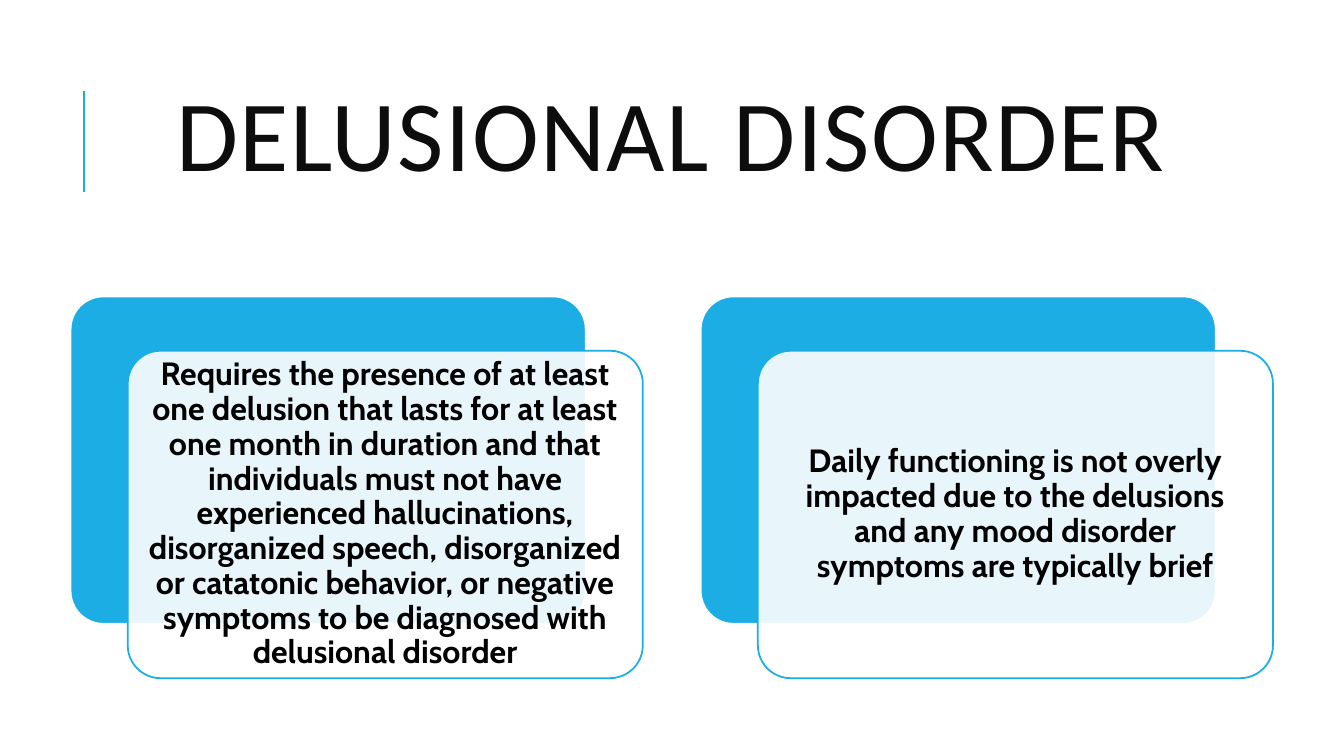
from dataclasses import dataclass

from lxml.etree import SubElement
from pptx import Presentation
from pptx.dml.color import RGBColor as Rgb
from pptx.enum.shapes import MSO_CONNECTOR as Connector, MSO_SHAPE as Shape
from pptx.enum.text import MSO_ANCHOR as Anchor, PP_ALIGN as Align
from pptx.oxml.ns import qn
from pptx.util import Cm, Pt


@dataclass(frozen=True)
class Theme:
    accent: Rgb = Rgb(0x1C, 0xAD, 0xE4)
    white: Rgb = Rgb(0xFF, 0xFF, 0xFF)
    title_ink: Rgb = Rgb(0x0D, 0x0D, 0x0D)
    body_ink: Rgb = Rgb(0, 0, 0)
    title_font: str = "Calibri"
    body_font: str = "Cabin"
    title_size: int = 72
    body_size: int = 23
    card_line: float = 1.25
    rule_line: float = 1.5


class SlideBuilder:
    def __init__(self, slide, theme):
        self.slide = slide
        self.theme = theme

    def add_text(self, frame, text, font, size, color, spacing, bold=False):
        """Fill a text frame with one centred paragraph."""
        frame.word_wrap = True
        frame.vertical_anchor = Anchor.MIDDLE
        para = frame.paragraphs[0]
        para.alignment = Align.CENTER
        para.line_spacing = spacing
        span = para.add_run()
        span.text = text
        span.font.name = font
        span.font.size = Pt(size)
        span.font.bold = bold
        span.font.color.rgb = color
        return span

    def title(self, text, left, top, width, height):
        theme = self.theme
        box = self.slide.shapes.add_textbox(Cm(left), Cm(top), Cm(width), Cm(height))
        span = self.add_text(box.text_frame, text, theme.title_font,
                             theme.title_size, theme.title_ink, 0.8)
        # Letter spacing in hundredths of a point
        span.font._element.set("spc", "100")

    def rule(self, x, top, bottom):
        line = self.slide.shapes.add_connector(
            Connector.STRAIGHT, Cm(x), Cm(bottom), Cm(x), Cm(top))
        line.line.color.rgb = self.theme.accent
        line.line.width = Pt(self.theme.rule_line)
        SubElement(line._element.spPr, qn("a:effectLst"))

    def panel(self, left, top, width, height, fill, outline, opacity=100):
        box = self.slide.shapes.add_shape(
            Shape.ROUNDED_RECTANGLE, Cm(left), Cm(top), Cm(width), Cm(height))
        box.shadow.inherit = False
        box.adjustments[0] = 0.1
        box.fill.solid()
        box.fill.fore_color.rgb = fill
        box.line.color.rgb = outline
        box.line.width = Pt(self.theme.card_line)
        if opacity < 100:
            color = box._element.spPr.find(qn("a:solidFill"))[0]
            SubElement(color, qn("a:alpha"), val=str(opacity * 1000))
        return box

    def card(self, text, left, top, width, height, shift_x, shift_y):
        """Draw a solid back panel and a translucent text panel over it."""
        theme = self.theme
        self.panel(left, top, width, height, theme.accent, theme.white)
        front = self.panel(left + shift_x, top + shift_y, width, height,
                           theme.white, theme.accent, opacity=90)
        frame = front.text_frame
        frame.margin_left = frame.margin_right = Cm(0.25)
        frame.margin_top = frame.margin_bottom = Cm(0.25)
        self.add_text(frame, text, theme.body_font, theme.body_size,
                      theme.body_ink, 0.9, bold=True)


CARD_TEXTS = (
    "Requires the presence of at least one delusion that lasts for at least "
    "one month in duration and that individuals must not have experienced "
    "hallucinations, disorganized speech, disorganized or catatonic behavior, "
    "or negative symptoms to be diagnosed with delusional disorder",
    "Daily functioning is not overly impacted due to the delusions and any "
    "mood disorder symptoms are typically brief",
)


def main():
    deck = Presentation()
    deck.slide_width, deck.slide_height = Cm(33.87), Cm(19.05)
    page = SlideBuilder(deck.slides.add_slide(deck.slide_layouts[6]), Theme())

    # Heading with its accent rule
    page.rule(2.12, 2.3, 4.84)
    page.title("DELUSIONAL DISORDER", 1.75, 1.75, 30.33, 3.66)

    # Two layered cards, evenly stepped
    left, step = 1.78, 15.88
    for column, text in enumerate(CARD_TEXTS):
        page.card(text, left + column * step, 7.47, 12.98, 8.25, 1.44, 1.37)

    deck.save("out.pptx")


if __name__ == "__main__":
    main()
